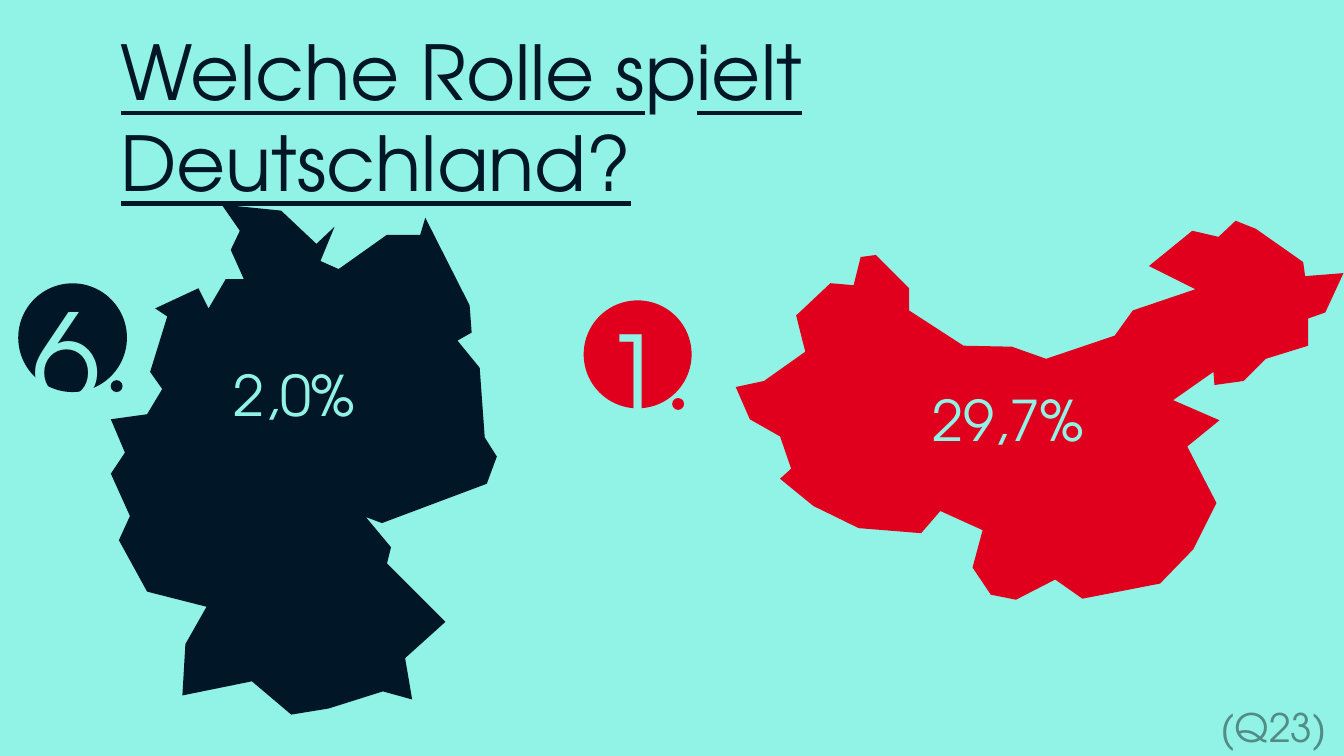
from pptx import Presentation
from pptx import util as u
from pptx.dml import color
from pptx.enum import shapes, text

MINT, NAVY, RED, GREY = "91F3E6", "011627", "E0001E", "538C85"
FACE = "TeX Gyre Adventor"
UNIT = u.Cm(0.0254)

GERMANY = [
    (110, 416), (146, 411), (161, 386), (149, 369), (166, 314), (154, 306),
    (197, 286), (207, 306), (224, 277), (242, 277), (229, 248), (238, 229),
    (220, 203), (279, 209), (314, 242), (332, 225), (318, 259), (336, 267),
    (384, 233), (417, 233), (422, 216), (466, 303), (468, 330), (454, 338),
    (476, 365), (481, 434), (493, 453), (483, 480), (379, 519), (363, 513),
    (388, 543), (384, 559), (442, 617), (402, 653), (409, 694), (380, 686),
    (326, 703), (289, 709), (250, 676), (181, 690), (184, 639), (205, 602),
    (146, 587), (118, 536), (129, 512), (110, 470), (124, 449),
]
CHINA = [
    (730, 384), (744, 416), (774, 433), (785, 465), (774, 475), (807, 502),
    (852, 524), (914, 529), (933, 507), (975, 526), (965, 563), (983, 590),
    (1008, 595), (1047, 575), (1074, 594), (1151, 579), (1184, 545),
    (1207, 499), (1178, 443), (1210, 417), (1164, 397), (1204, 369),
    (1205, 382), (1234, 378), (1256, 356), (1298, 343), (1298, 316),
    (1315, 310), (1333, 271), (1295, 274), (1293, 260), (1246, 227),
    (1226, 219), (1209, 235), (1183, 229), (1140, 264), (1186, 287),
    (1124, 308), (1106, 333), (1038, 356), (1004, 344), (956, 343),
    (902, 308), (902, 286), (869, 253), (854, 255), (847, 283), (824, 281),
    (790, 313), (799, 349), (758, 378),
]


def tint(code):
    return color.RGBColor.from_string(code)


def paint(shape, code):
    shape.shadow.inherit = False
    shape.fill.solid()
    shape.fill.fore_color.rgb = tint(code)
    shape.line.fill.background()


def land(slide, points, code):
    build = slide.shapes.build_freeform(*points[0], scale=UNIT)
    build.add_line_segments(points[1:], close=True)
    paint(build.convert_to_shape(), code)


def disc(slide, left, top, size, code):
    box = [u.Cm(n) for n in (left, top, size, size)]
    paint(slide.shapes.add_shape(shapes.MSO_SHAPE.OVAL, *box), code)


def label(slide, box, runs, size, code, wrap=True):
    frame = slide.shapes.add_textbox(*[u.Cm(n) for n in box]).text_frame
    frame.word_wrap = wrap
    frame.auto_size = text.MSO_AUTO_SIZE.SHAPE_TO_FIT_TEXT
    para = frame.paragraphs[0]
    for words, line in runs:
        run = para.add_run()
        run.text = words
        style = {"name": FACE, "size": u.Pt(size), "underline": line}
        for key, value in style.items():
            setattr(run.font, key, value)
        run.font.color.rgb = tint(code)
    return para


def main():
    deck = Presentation()
    deck.slide_width, deck.slide_height = u.Cm(33.87), u.Cm(19.05)
    slide = deck.slides.add_slide(deck.slide_layouts[6])
    slide.background.fill.solid()
    slide.background.fill.fore_color.rgb = tint(MINT)

    land(slide, GERMANY, NAVY)
    title = [("Welche Rolle s", True), ("p", False), ("ielt Deutschland?", True)]
    label(slide, (2.79, 0.51, 29.26, 2.57), title, 54, NAVY)
    label(slide, (5.64, 8.97, 4.01, 1.96), [("2,0%", None)], 40, MINT)
    disc(slide, 0.46, 7.14, 2.74, NAVY)
    label(slide, (0.58, 6.93, 2.9, 4.01), [("6", None)], 88, MINT)
    disc(slide, 2.79, 9.58, 0.3, NAVY)

    land(slide, CHINA, RED)
    label(slide, (30.51, 17.6, 3.35, 1.45), [("(Q23)", None)], 28, GREY, False)
    disc(slide, 14.71, 7.57, 2.72, RED)
    label(slide, (14.94, 7.57, 2.26, 3.68), [("1", None)], 80, MINT, False)
    share = label(slide, (21.97, 9.6, 6.45, 1.96), [("29,7%", None)], 40, MINT)
    share.level = 1
    share._p.get_or_add_pPr().set("marL", str(u.Cm(1.27)))
    disc(slide, 16.94, 10.03, 0.3, RED)

    deck.save("out.pptx")


if __name__ == "__main__":
    main()
